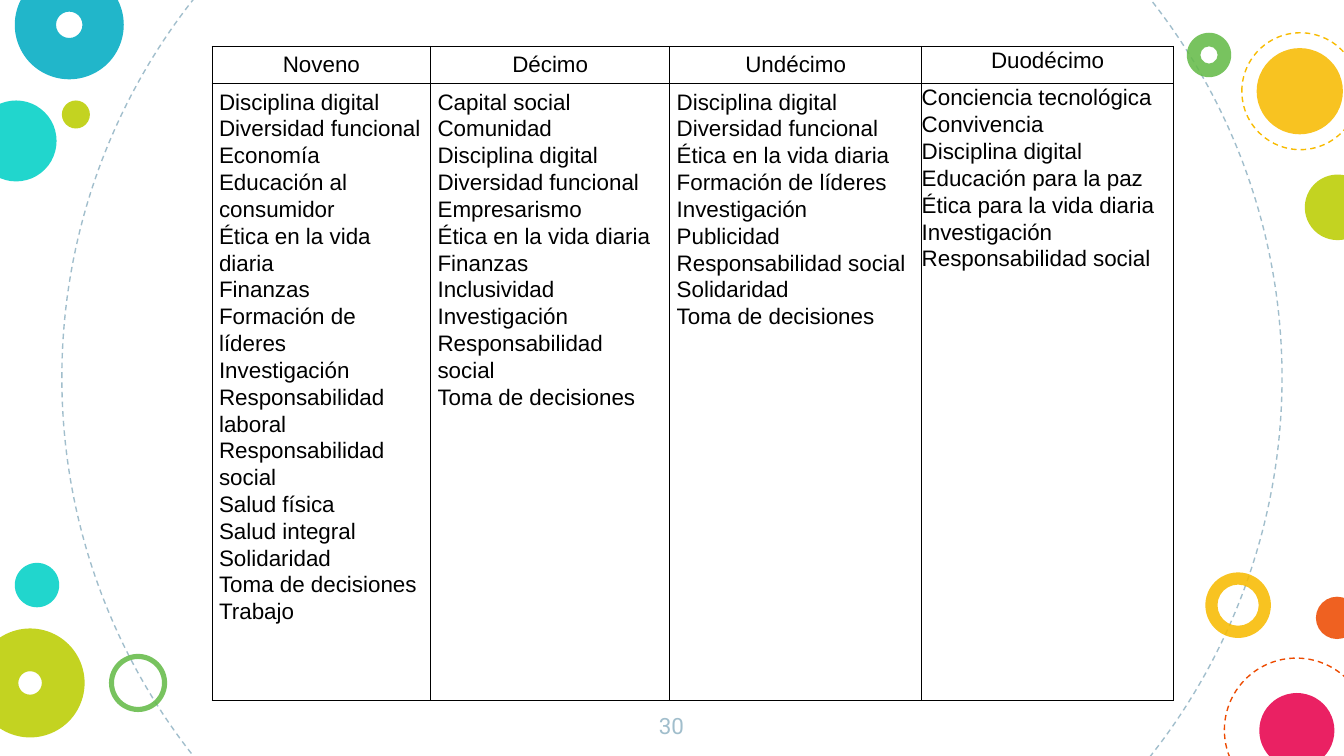
from dataclasses import dataclass
from typing import Optional

from lxml import etree
from pptx import Presentation
from pptx.dml.color import RGBColor
from pptx.enum.dml import MSO_LINE
from pptx.enum.shapes import MSO_SHAPE
from pptx.enum.text import PP_ALIGN
from pptx.oxml.ns import qn
from pptx.util import Cm, Pt

ELLIPSE, DONUT = MSO_SHAPE.OVAL, MSO_SHAPE.DONUT
DASH = MSO_LINE.DASH
LEFT, CENTER = PP_ALIGN.LEFT, PP_ALIGN.CENTER

BLACK = RGBColor(0x00, 0x00, 0x00)
GRAY = RGBColor(0xA1, 0xBE, 0xCC)
TURQUOISE = RGBColor(0x00, 0xD1, 0xC6)
BLUE = RGBColor(0x00, 0xAC, 0xC3)
YELLOW = RGBColor(0xF8, 0xBB, 0x00)
LIME = RGBColor(0xBB, 0xCD, 0x00)
GREEN = RGBColor(0x65, 0xBB, 0x48)
ORANGE = RGBColor(0xED, 0x4A, 0x00)
PINK = RGBColor(0xE8, 0x00, 0x4C)

OPACITY = 87
LINE_WIDTH = Pt(0.75)


@dataclass
class Circle:
    """Position and diameter in cm; ring is the donut thickness ratio."""
    left: float
    top: float
    diameter: float
    color: RGBColor
    ring: Optional[float] = None
    dashed: bool = False


@dataclass
class Grade:
    """One table column, with its width and cell margins in cm."""
    name: str
    width: float
    topics: list[str]
    side_margin: float = 0.13
    top_margin: float = 0.08


CIRCLES = [
    Circle(1.17, -4.39, 23.06, GRAY, dashed=True),
    Circle(-0.46, 1.9, 1.53, TURQUOISE),
    Circle(22.78, 10.82, 1.24, YELLOW, ring=0.186),
    Circle(0.28, -0.56, 2.06, BLUE, ring=0.379),
    Circle(1.17, 1.9, 0.53, LIME),
    Circle(23.14, 12.44, 2.72, ORANGE, dashed=True),
    Circle(2.06, 12.36, 1.1, GREEN, ring=0.088),
    Circle(24.87, 11.28, 0.8, ORANGE),
    Circle(-0.46, 11.88, 2.06, LIME, ring=0.392),
    Circle(23.8, 13.1, 1.42, PINK),
    Circle(22.43, 0.62, 0.84, GREEN, ring=0.306),
    Circle(23.75, 0.91, 1.63, YELLOW),
    Circle(24.66, 3.3, 1.24, LIME),
    Circle(23.47, 0.62, 2.21, YELLOW, dashed=True),
    Circle(0.28, 10.64, 0.84, TURQUOISE),
]

GRADES = [
    Grade("Noveno", 4.13, [
        "Disciplina digital", "Diversidad funcional", "Economía",
        "Educación al consumidor", "Ética en la vida diaria", "Finanzas",
        "Formación de líderes", "Investigación", "Responsabilidad laboral",
        "Responsabilidad social", "Salud física", "Salud integral",
        "Solidaridad", "Toma de decisiones", "Trabajo"]),
    Grade("Décimo", 4.52, [
        "Capital social", "Comunidad", "Disciplina digital",
        "Diversidad funcional", "Empresarismo", "Ética en la vida diaria",
        "Finanzas", "Inclusividad", "Investigación",
        "Responsabilidad social", "Toma de decisiones"]),
    Grade("Undécimo", 4.76, [
        "Disciplina digital", "Diversidad funcional",
        "Ética en la vida diaria", "Formación de líderes", "Investigación",
        "Publicidad", "Responsabilidad social", "Solidaridad",
        "Toma de decisiones"]),
    Grade("Duodécimo", 4.76, [
        "Conciencia tecnológica", "Convivencia", "Disciplina digital",
        "Educación para la paz", "Ética para la vida diaria",
        "Investigación", "Responsabilidad social"],
        side_margin=0, top_margin=0),
]
ROW_HEIGHTS = [0.64, 11.66]


def format_paragraph(paragraph, font_name: str, color: RGBColor, alignment) -> None:
    paragraph.alignment = alignment
    for run in paragraph.runs:
        run.font.name = font_name
        run.font.size = Pt(12)
        run.font.color.rgb = color


def draw_circle(slide, circle: Circle) -> None:
    preset = ELLIPSE if circle.ring is None else DONUT
    shape = slide.shapes.add_shape(preset, Cm(circle.left), Cm(circle.top),
                                   Cm(circle.diameter), Cm(circle.diameter))
    shape.shadow.inherit = False
    if circle.ring is not None:
        shape.adjustments[0] = circle.ring
    if circle.dashed:
        shape.fill.background()
        shape.line.color.rgb = circle.color
        shape.line.width = LINE_WIDTH
        shape.line.dash_style = DASH
    else:
        shape.fill.solid()
        shape.fill.fore_color.rgb = circle.color
        shape.line.fill.background()
        color_element = shape._element.spPr.find(".//" + qn("a:srgbClr"))
        etree.SubElement(color_element, qn("a:alpha"), val=str(OPACITY * 1000))


def add_borders(cell) -> None:
    properties = cell._tc.get_or_add_tcPr()
    for side in ("lnL", "lnR", "lnT", "lnB"):
        line = etree.SubElement(properties, qn(f"a:{side}"), w=str(LINE_WIDTH))
        fill = etree.SubElement(line, qn("a:solidFill"))
        etree.SubElement(fill, qn("a:srgbClr"), val=str(BLACK))


def fill_cell(cell, grade: Grade, lines: list[str], alignment) -> None:
    cell.margin_left = cell.margin_right = Cm(grade.side_margin)
    cell.margin_top = cell.margin_bottom = Cm(grade.top_margin)
    add_borders(cell)
    cell.fill.background()
    cell.text_frame.text = "\n".join(lines)
    for paragraph in cell.text_frame.paragraphs:
        paragraph.line_spacing = 1.07
        format_paragraph(paragraph, "Arial", BLACK, alignment)


def draw_table(slide, grades: list[Grade]) -> None:
    width = sum(grade.width for grade in grades)
    table = slide.shapes.add_table(len(ROW_HEIGHTS), len(grades), Cm(4.01), Cm(0.88),
                                   Cm(width), Cm(sum(ROW_HEIGHTS))).table
    table.first_row = table.horz_banding = False
    for row, height in zip(table.rows, ROW_HEIGHTS):
        row.height = Cm(height)
    for index, grade in enumerate(grades):
        table.columns[index].width = Cm(grade.width)
        fill_cell(table.cell(0, index), grade, [grade.name], CENTER)
        fill_cell(table.cell(1, index), grade, grade.topics, LEFT)


def draw_page_number(slide, number: str) -> None:
    text_frame = slide.shapes.add_textbox(Cm(12.04), Cm(13.21), Cm(1.3), Cm(1.09)).text_frame
    text_frame.word_wrap = True
    text_frame.margin_left = text_frame.margin_right = Cm(0.25)
    text_frame.margin_top = text_frame.margin_bottom = Cm(0.25)
    text_frame.text = number
    format_paragraph(text_frame.paragraphs[0], "Roboto", GRAY, CENTER)


def main() -> None:
    presentation = Presentation()
    presentation.slide_width = Cm(25.4)
    presentation.slide_height = Cm(14.29)
    slide = presentation.slides.add_slide(presentation.slide_layouts[6])

    # Decorative circles
    for circle in CIRCLES:
        draw_circle(slide, circle)

    # Page number and table of topics by grade
    draw_page_number(slide, "30")
    draw_table(slide, GRADES)

    presentation.save("out.pptx")


if __name__ == "__main__":
    main()
